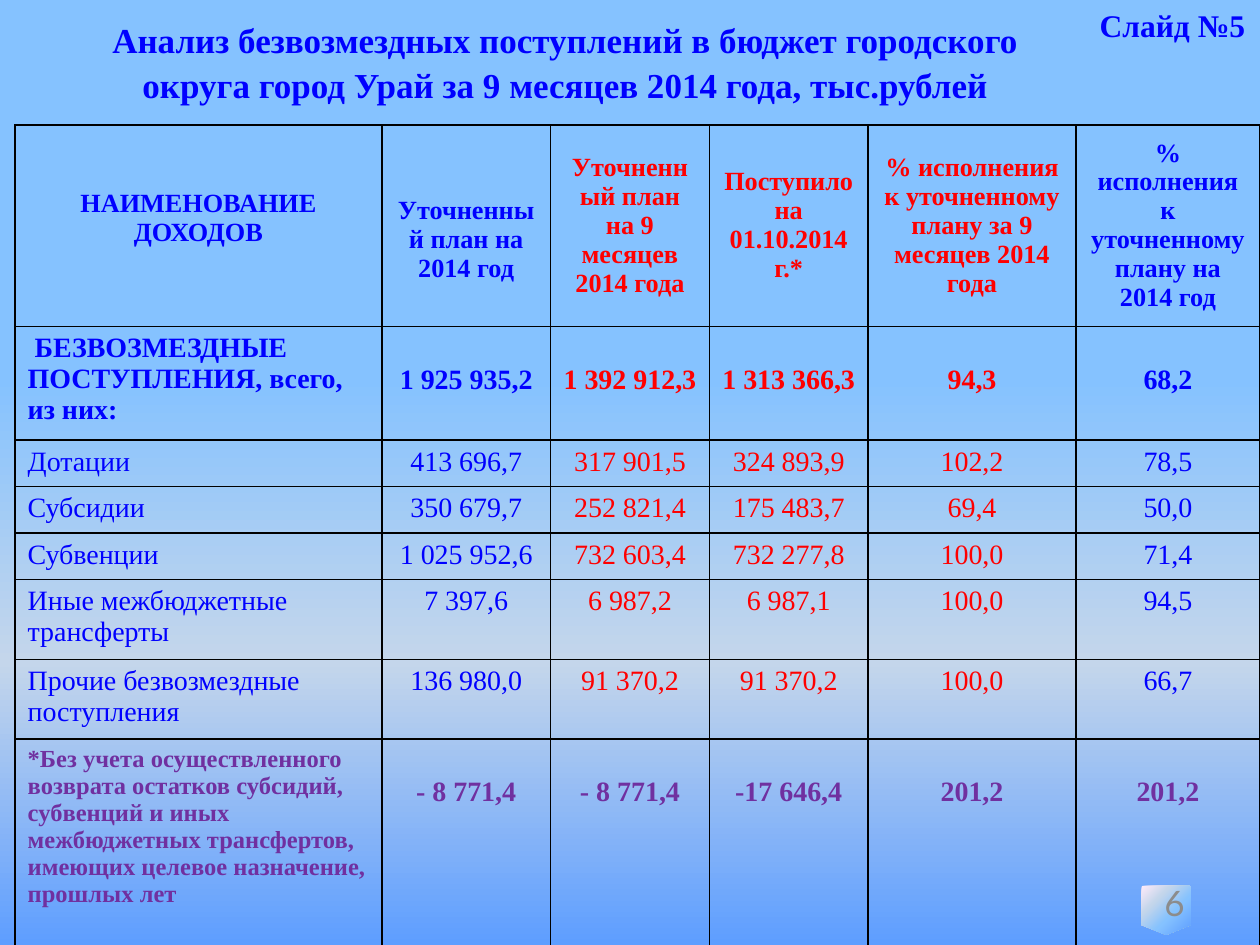
from dataclasses import dataclass

from lxml import etree
from pptx import Presentation
from pptx.dml.color import RGBColor
from pptx.enum.shapes import MSO_SHAPE
from pptx.enum.text import MSO_ANCHOR, MSO_AUTO_SIZE, PP_ALIGN
from pptx.oxml import parse_xml
from pptx.oxml.ns import nsdecls, qn
from pptx.util import Inches, Pt


@dataclass(frozen=True)
class Theme:
    font: str = "Times New Roman"
    number_font: str = "Lato"
    blue: str = "0000FF"
    red: str = "FF0000"
    purple: str = "7030A0"
    gray: str = "8C8C8C"
    border: str = "000000"
    title_size: int = 20
    label_size: int = 18
    body_size: int = 16
    header_size: int = 15
    note_size: int = 14
    backdrop: tuple = ((40, "85C2FF"), (70, "C4D6EB"), (100, "5E9EFF"), (100, "FFEBFA"))
    badge: tuple = ((0, "5E9EFF"), (40, "85C2FF"), (70, "C4D6EB"), (100, "FFEBFA"))


THEME = Theme()
LINEAR = '<a:lin ang="5400000" scaled="0"/>'
FROM_CORNER = '<a:path path="circle"><a:fillToRect l="100000" t="100000"/></a:path>'

COLUMN_WIDTHS = (2.91, 1.34, 1.26, 1.26, 1.65, 1.46)
COLUMN_COLORS = (THEME.blue, THEME.blue, THEME.red, THEME.red, THEME.red, THEME.blue)

HEADERS = (
    "НАИМЕНОВАНИЕ ДОХОДОВ",
    "Уточненный план на 2014 год",
    "Уточненный план на 9 месяцев 2014 года",
    "Поступило на 01.10.2014 г.*",
    "% исполнения к уточненному плану за 9 месяцев 2014 года",
    "% исполнения к уточненному плану на 2014 год",
)
TOTAL = (" БЕЗВОЗМЕЗДНЫЕ ПОСТУПЛЕНИЯ, всего, из них:",
         "1 925 935,2", "1 392 912,3", "1 313 366,3", "94,3", "68,2")
INCOMES = (
    ("Дотации", "413 696,7", "317 901,5", "324 893,9", "102,2", "78,5"),
    ("Субсидии", "350 679,7", "252 821,4", "175 483,7", "69,4", "50,0"),
    ("Субвенции", "1 025 952,6", "732 603,4", "732 277,8", "100,0", "71,4"),
    ("Иные межбюджетные трансферты", "7 397,6", "6 987,2", "6 987,1", "100,0", "94,5"),
    ("Прочие безвозмездные поступления", "136 980,0", "91 370,2", "91 370,2", "100,0", "66,7"),
)
RETURNS = ("*Без учета осуществленного возврата остатков субсидий, субвенций и иных "
           "межбюджетных трансфертов, имеющих целевое назначение, прошлых лет",
           "- 8 771,4", "- 8 771,4", "-17 646,4", "201,2", "201,2")
ROW_HEIGHTS = (1.6, 0.9, 0.37, 0.37, 0.37, 0.63, 0.63, 1.76)
CELL_MARGIN = 0.05
LOWERED_MARGIN = 0.3


def set_gradient(fill, stops, direction):
    """Fill with several stops, given as (percent, colour) pairs."""
    fill.gradient()
    gradient = fill._xPr.find(qn("a:gradFill"))
    stop_xml = "".join(
        f'<a:gs pos="{percent * 1000}"><a:srgbClr val="{color}"/></a:gs>'
        for percent, color in stops)
    gradient.getparent().replace(gradient, parse_xml(
        f'<a:gradFill {nsdecls("a")} rotWithShape="1">'
        f'<a:gsLst>{stop_xml}</a:gsLst>{direction}</a:gradFill>'))


def write_text(text_frame, text, size, color, bold=False, align=PP_ALIGN.LEFT, font=THEME.font):
    text_frame.text = text
    paragraph = text_frame.paragraphs[0]
    paragraph.alignment = align
    for run in paragraph.runs:
        run.font.name = font
        run.font.size = Pt(size)
        run.font.bold = bold
        run.font.color.rgb = RGBColor.from_string(color)


def add_label(slide, box, text, size, color, **style):
    shape = slide.shapes.add_textbox(*map(Inches, box))
    write_text(shape.text_frame, text, size, color, **style)
    return shape.text_frame


def set_title(slide, text):
    title = slide.shapes.title
    title.left, title.top = Inches(0.35), Inches(0.07)
    title.width, title.height = Inches(8.27), Inches(0.77)
    frame = title.text_frame
    write_text(frame, text, THEME.title_size, THEME.blue, True, PP_ALIGN.CENTER)
    frame.word_wrap = True
    frame.vertical_anchor = MSO_ANCHOR.TOP
    frame.auto_size = MSO_AUTO_SIZE.SHAPE_TO_FIT_TEXT
    frame.paragraphs[0].line_spacing = 1.08


def add_page_badge(slide, number):
    badge = slide.shapes.add_shape(MSO_SHAPE.FLOWCHART_OFFPAGE_CONNECTOR, Inches(9.06),
                                   Inches(7.03), Inches(0.39), Inches(0.39))
    badge.shadow.inherit = False
    badge.line.fill.background()
    set_gradient(badge.fill, THEME.badge, FROM_CORNER)
    frame = add_label(slide, (7.17, 6.95, 2.33, 0.43), number, THEME.title_size, THEME.gray,
                      align=PP_ALIGN.RIGHT, font=THEME.number_font)
    frame.word_wrap = True
    frame.vertical_anchor = MSO_ANCHOR.MIDDLE


def set_borders(cell):
    properties = cell._tc.get_or_add_tcPr()
    for index, side in enumerate(("lnL", "lnR", "lnT", "lnB")):
        line = etree.Element(qn(f"a:{side}"), w=str(Pt(1)))
        fill = etree.SubElement(line, qn("a:solidFill"))
        etree.SubElement(fill, qn("a:srgbClr"), val=THEME.border)
        properties.insert(index, line)


def fill_cell(cell, text, size, color, bold, align, margin_top=CELL_MARGIN):
    write_text(cell.text_frame, text, size, color, bold, align)
    cell.margin_top = Inches(margin_top)
    cell.fill.background()
    set_borders(cell)


def fill_header(cells):
    for column, (cell, text) in enumerate(zip(cells, HEADERS)):
        margin = {0: 0.51, 1: 0.28}.get(column, CELL_MARGIN)
        fill_cell(cell, text, THEME.header_size, COLUMN_COLORS[column], True,
                  PP_ALIGN.CENTER, margin)
        cell.vertical_anchor = MSO_ANCHOR.MIDDLE if column else MSO_ANCHOR.TOP


def fill_row(cells, texts, colors=COLUMN_COLORS, bold=False, name_size=THEME.body_size):
    """Name on the left, centred values; in bold rows the values sit one line lower."""
    fill_cell(cells[0], texts[0], name_size, colors[0], bold, PP_ALIGN.LEFT)
    margin = LOWERED_MARGIN if bold else CELL_MARGIN
    for cell, text, color in zip(cells[1:], texts[1:], colors[1:]):
        fill_cell(cell, text, THEME.body_size, color, bold, PP_ALIGN.CENTER, margin)


def add_income_table(slide):
    table = slide.shapes.add_table(len(ROW_HEIGHTS), len(COLUMN_WIDTHS), Inches(0.12),
                                   Inches(0.99), Inches(sum(COLUMN_WIDTHS)),
                                   Inches(sum(ROW_HEIGHTS))).table
    table.first_row = table.horz_banding = False
    for column, width in zip(table.columns, COLUMN_WIDTHS):
        column.width = Inches(width)
    for row, height in zip(table.rows, ROW_HEIGHTS):
        row.height = Inches(height)
    header, total, *incomes, returns = [list(row.cells) for row in table.rows]
    fill_header(header)
    fill_row(total, TOTAL, bold=True)
    for cells, texts in zip(incomes, INCOMES):
        fill_row(cells, texts)
    fill_row(returns, RETURNS, [THEME.purple] * len(COLUMN_WIDTHS), True, THEME.note_size)


def main():
    presentation = Presentation()
    presentation.slide_width, presentation.slide_height = Inches(10), Inches(7.5)
    slide = presentation.slides.add_slide(presentation.slide_layouts[5])
    set_gradient(slide.background.fill, THEME.backdrop, LINEAR)
    add_page_badge(slide, "6")
    set_title(slide, "Анализ безвозмездных поступлений в бюджет городского округа "
                     "город Урай за 9 месяцев 2014 года, тыс.рублей")
    add_income_table(slide)
    label = add_label(slide, (8.63, 0, 1.37, 0.4), "Слайд №5", THEME.label_size,
                      THEME.blue, bold=True)
    label.word_wrap = False
    label.auto_size = MSO_AUTO_SIZE.SHAPE_TO_FIT_TEXT
    # The page number lies above the table, which has no fill.
    presentation.save("out.pptx")


if __name__ == "__main__":
    main()
